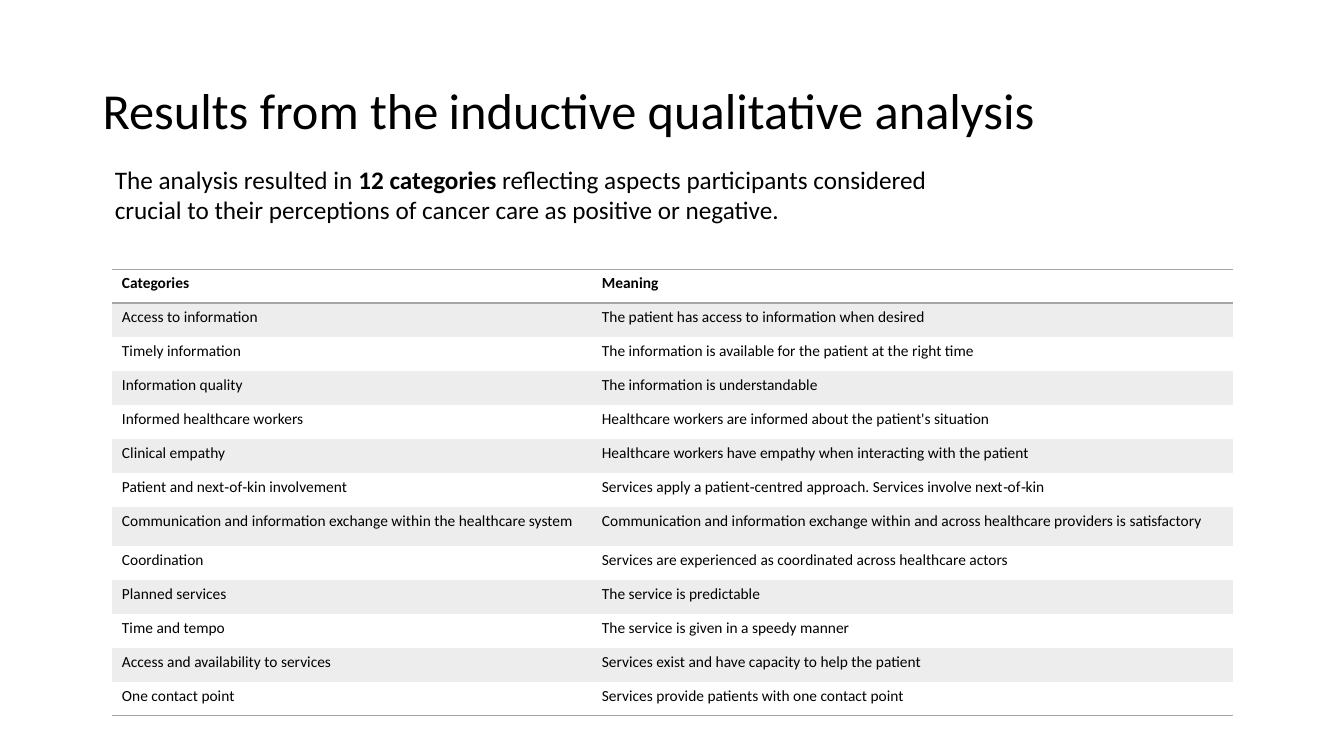
from pptx import Presentation
from pptx import util as u
from pptx.dml.color import RGBColor
from pptx.enum import text
from pptx.oxml import parse_xml
from pptx.oxml.ns import nsdecls

Inches = u.Inches
FONT = "Calibri"
COLORS = {"text": "000000", "rule": "A5A5A5", "band": "EDEDED"}
PLAIN_TABLE_STYLE = "{2D5ABB26-0587-4C30-8999-92F81FD0307C}"
COLUMN_WIDTHS = (4.76, 6.36)
ROW_HEIGHT = 0.337
TALL_ROW, TALL_HEIGHT = 7, 0.39

CATEGORIES = [
    ("Categories", "Meaning"),
    ("Access to information", "The patient has access to information when desired"),
    ("Timely information", "The information is available for the patient at the right time"),
    ("Information quality", "The information is understandable"),
    ("Informed healthcare workers", "Healthcare workers are informed about the patient's situation"),
    ("Clinical empathy", "Healthcare workers have empathy when interacting with the patient"),
    ("Patient and next‐of‐kin involvement",
     "Services apply a patient‐centred approach. Services involve next‐of‐kin"),
    ("Communication and information exchange within the healthcare system",
     "Communication and information exchange within and across healthcare providers is satisfactory"),
    ("Coordination", "Services are experienced as coordinated across healthcare actors"),
    ("Planned services", "The service is predictable"),
    ("Time and tempo", "The service is given in a speedy manner"),
    ("Access and availability to services", "Services exist and have capacity to help the patient"),
    ("One contact point", "Services provide patients with one contact point"),
]


def add_run(paragraph, content, size, bold=False):
    run = paragraph.add_run()
    run.text = content
    run.font.name = FONT
    run.font.size = u.Pt(size)
    run.font.bold = bold
    run.font.color.rgb = RGBColor.from_string(COLORS["text"])


def add_text(slide, position, runs, line_spacing=None):
    """Add a text box from (content, size, bold) runs."""
    box = slide.shapes.add_textbox(*map(Inches, position))
    frame = box.text_frame
    frame.word_wrap = True
    frame.vertical_anchor = text.MSO_ANCHOR.MIDDLE
    paragraph = frame.paragraphs[0]
    paragraph.line_spacing = line_spacing
    for content, size, bold in runs:
        add_run(paragraph, content, size, bold=bold)


def add_border(cell, edge):
    """Draw a thin rule on one edge: lnT or lnB."""
    cell._tc.get_or_add_tcPr().append(parse_xml(
        f'<a:{edge} {nsdecls("a")} w="12700"><a:solidFill>'
        f'<a:srgbClr val="{COLORS["rule"]}"/></a:solidFill></a:{edge}>'))


def fill_cell(cell, content, row, last_row):
    add_run(cell.text_frame.paragraphs[0], content, 11, bold=row == 0)
    if row == 0:
        add_border(cell, "lnT")
    if row in (0, last_row):
        add_border(cell, "lnB")
    if row % 2:
        cell.fill.solid()
        cell.fill.fore_color.rgb = RGBColor.from_string(COLORS["band"])
    else:
        cell.fill.background()


def add_category_table(slide):
    frame = slide.shapes.add_table(
        len(CATEGORIES), len(COLUMN_WIDTHS),
        Inches(1.11), Inches(2.67), Inches(11.12), Inches(4.43))
    table = frame.table
    table.horz_banding = False
    table._tbl.tblPr.find("{*}tableStyleId").text = PLAIN_TABLE_STYLE
    for column, width in zip(table.columns, COLUMN_WIDTHS):
        column.width = Inches(width)
    for row, contents in enumerate(CATEGORIES):
        table.rows[row].height = Inches(TALL_HEIGHT if row == TALL_ROW else ROW_HEIGHT)
        for column, content in enumerate(contents):
            fill_cell(table.cell(row, column), content, row, len(CATEGORIES) - 1)


def main():
    presentation = Presentation()
    presentation.slide_width = Inches(13.33)
    presentation.slide_height = Inches(7.5)
    slide = presentation.slides.add_slide(presentation.slide_layouts[6])
    add_text(slide, (0.92, 0.4, 11.5, 1.45), [
        ("Results from the", 36, False),
        (" ", 31, False),
        ("inductive qualitative analysis", 36, False),
    ], line_spacing=0.9)
    add_text(slide, (1.04, 1.57, 8.89, 0.71), [
        ("The analysis resulted in ", 18, False),
        ("12 categories ", 18, True),
        ("reflecting aspects participants considered crucial to their "
         "perceptions of cancer care as positive or negative.", 18, False),
    ])
    add_category_table(slide)
    presentation.save("out.pptx")


if __name__ == "__main__":
    main()
